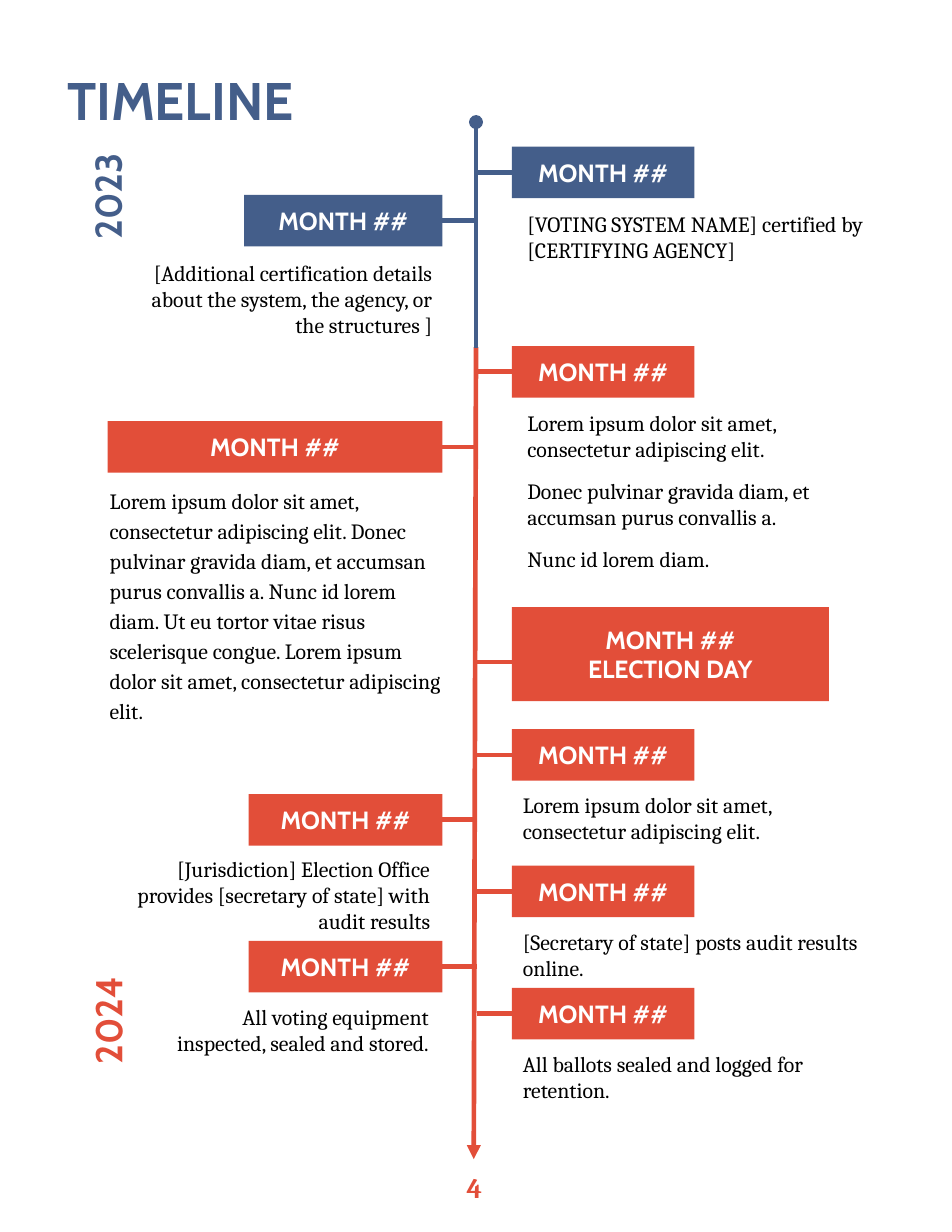
from lxml.etree import SubElement
from pptx import Presentation
from pptx.dml.color import RGBColor
from pptx.enum.shapes import MSO_CONNECTOR as Connector, MSO_SHAPE as Shape
from pptx.enum.text import MSO_ANCHOR as Anchor, MSO_AUTO_SIZE as AutoSize, PP_ALIGN as Align
from pptx.oxml.ns import qn
from pptx.util import Inches, Pt

BLUE = RGBColor(0x44, 0x5E, 0x8A)
RED = RGBColor(0xE2, 0x4E, 0x39)
WHITE = RGBColor(0xFF, 0xFF, 0xFF)
BLACK = RGBColor(0, 0, 0)

SPINE = 4.26
LEFT_EDGE, RIGHT_EDGE = 3.95, 4.57
LABEL_HEIGHT = 0.46


def write(shape, text, size=14, font="Cambria", color=BLACK, bold=False,
          align=Align.LEFT, anchor=Anchor.TOP, spacing=1.0):
    """Fill a shape with text: a newline starts a paragraph, a vertical tab a line."""
    frame = shape.text_frame
    frame.word_wrap = True
    frame.auto_size = AutoSize.NONE
    frame.vertical_anchor = anchor
    frame.margin_left = frame.margin_right = Inches(0.1)
    frame.margin_top = frame.margin_bottom = Inches(0.1)
    frame.text = text
    for index, paragraph in enumerate(frame.paragraphs):
        paragraph.alignment = align
        paragraph.line_spacing = spacing
        paragraph.space_before = Pt(10 if index else 0)
        for run in paragraph.runs:
            run.font.name = font
            run.font.size = Pt(size)
            run.font.bold = bold
            run.font.color.rgb = color


def draw_line(start, end, color, **ends):
    """Draw a line; ends may give headEnd or tailEnd a marker type."""
    line = slide.shapes.add_connector(Connector.STRAIGHT, *map(Inches, start + end))
    line.line.color.rgb = color
    line.line.width = Pt(3)
    for tag, marker in ends.items():
        SubElement(line.line._get_or_add_ln(), qn(f"a:{tag}"), type=marker)
    SubElement(line._element.spPr, qn("a:effectLst"))


presentation = Presentation()
presentation.slide_width = Inches(8.5)
presentation.slide_height = Inches(11)
slide = presentation.slides.add_slide(presentation.slide_layouts[5])

title = slide.shapes.title
title.left, title.top, title.width, title.height = map(Inches, (0.5, 0.5, 7.5, 1.11))
write(title, "TIMELINE", size=34, font="Cabin", color=BLUE, bold=True)

draw_line((4.25, 3.1), (4.23, 10.35), RED, tailEnd="triangle")
draw_line((4.25, 1.09), (4.25, 3.11), BLUE, headEnd="oval")

# Labels: on the right side?, top, width, height, connector offset, colour, text
labels = [
    (True, 1.31, 1.63, LABEL_HEIGHT, 0.23, BLUE, "MONTH ##"),
    (False, 1.74, 1.77, LABEL_HEIGHT, 0.23, BLUE, "MONTH ##"),
    (True, 3.09, 1.63, LABEL_HEIGHT, 0.23, RED, "MONTH ##"),
    (False, 3.76, 2.99, LABEL_HEIGHT, 0.23, RED, "MONTH ##"),
    (True, 5.42, 2.83, 0.84, 0.49, RED, "MONTH ##\vELECTION DAY"),
    (True, 6.51, 1.63, LABEL_HEIGHT, 0.23, RED, "MONTH ##"),
    (False, 7.09, 1.73, LABEL_HEIGHT, 0.23, RED, "MONTH ##"),
    (True, 7.73, 1.63, LABEL_HEIGHT, 0.23, RED, "MONTH ##"),
    (False, 8.4, 1.73, LABEL_HEIGHT, 0.23, RED, "MONTH ##"),
    (True, 8.82, 1.63, LABEL_HEIGHT, 0.23, RED, "MONTH ##"),
]
for on_right, top, width, height, offset, color, text in labels:
    left = RIGHT_EDGE if on_right else LEFT_EDGE - width
    label = slide.shapes.add_shape(
        Shape.ROUNDED_RECTANGLE, *map(Inches, (left, top, width, height)))
    label.adjustments[0] = 0
    label.shadow.inherit = False
    label.fill.solid()
    label.fill.fore_color.rgb = color
    label.line.fill.background()
    write(label, text, size=16, font="Cabin", color=WHITE, bold=True,
          align=Align.CENTER, anchor=Anchor.MIDDLE)
    middle = top + offset
    draw_line((SPINE, middle), (RIGHT_EDGE if on_right else LEFT_EDGE, middle), color)

LOREM = "Lorem ipsum dolor sit amet, consectetur adipiscing elit."
DONEC = "Donec pulvinar gravida diam, et accumsan purus convallis a."
NUNC = "Nunc id lorem diam."

# Descriptions: left, top, width, height, text, format
descriptions = [
    (4.61, 1.78, 3.31, 0.84,
     "[VOTING SYSTEM NAME] certified by [CERTIFYING AGENCY]", {}),
    (1.13, 2.22, 2.83, 1.15,
     "[Additional certification details about the system, the agency, or the structures ]",
     {"align": Align.RIGHT}),
    (4.61, 3.56, 3.31, 1.71, f"{LOREM}\n{DONEC}\n{NUNC}", {}),
    (0.88, 4.22, 3.16, 2.55,
     f"{LOREM} {DONEC} {NUNC} Ut eu tortor vitae risus scelerisque congue. {LOREM}",
     {"spacing": 1.15}),
    (4.57, 6.97, 3.16, 0.84, LOREM, {}),
    (1, 7.54, 2.94, 0.84,
     "[Jurisdiction] Election Office provides [secretary of state] with audit results",
     {"align": Align.RIGHT}),
    (4.57, 8.19, 3.35, 0.84, "[Secretary of state] posts audit results online.", {}),
    (1.27, 8.86, 2.66, 0.84, "All voting equipment inspected, sealed and stored.",
     {"align": Align.RIGHT}),
    (4.57, 9.28, 3.35, 0.84, "All ballots sealed and logged for retention.", {}),
    (-0.03, 10.35, 8.53, 0.35, "4",
     {"size": 18, "color": RED, "bold": True, "align": Align.CENTER}),
]
for *box, text, text_format in descriptions:
    write(slide.shapes.add_textbox(*map(Inches, box)), text, **text_format)

years = [("2023", 0.44, 1.5, 1.03, BLUE), ("2024", 0.27, 8.86, 1.38, RED)]
for text, left, top, width, color in years:
    year = slide.shapes.add_textbox(*map(Inches, (left, top, width, 0.5)))
    year.rotation = 270
    write(year, text, size=24, font="Cabin", color=color, bold=True,
          align=Align.CENTER, anchor=Anchor.MIDDLE)

presentation.save("out.pptx")
